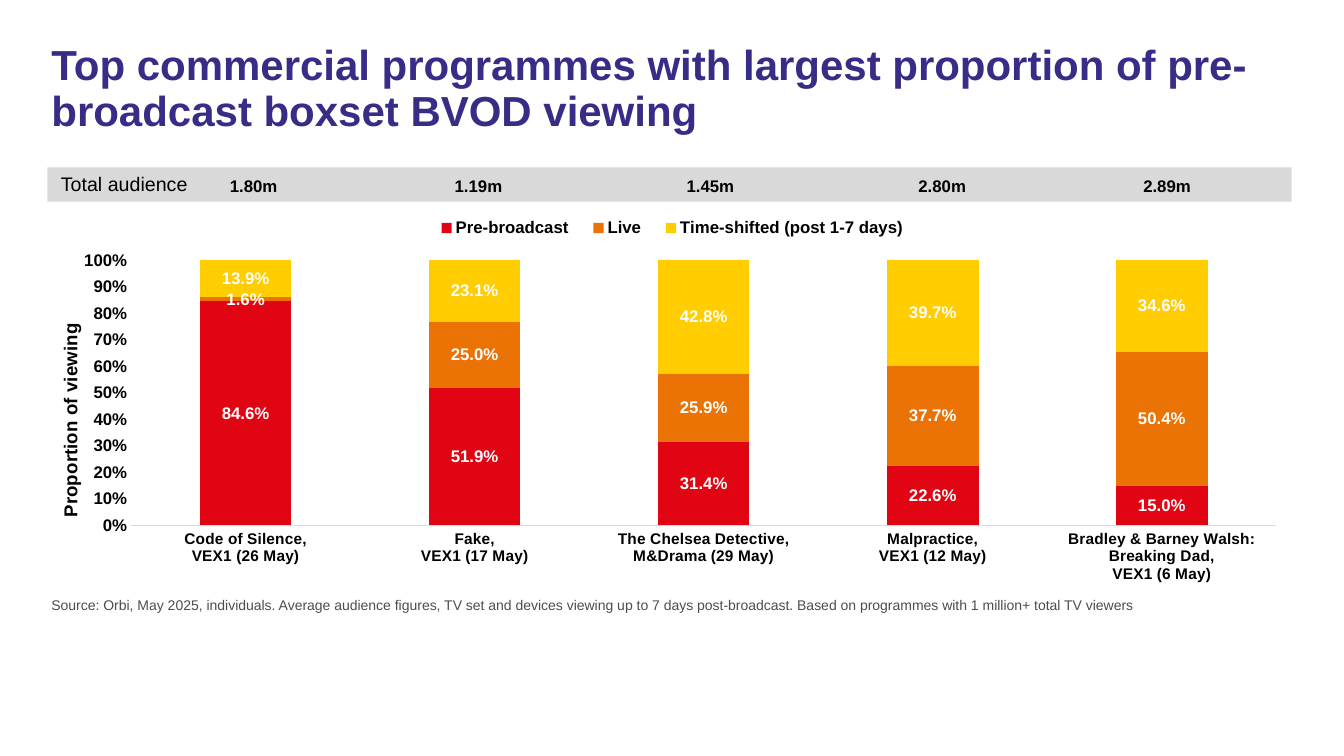
"""Build a slide on programmes with the most pre-broadcast boxset viewing."""
import dataclasses

import lxml.etree
import pptx
import pptx.chart.data
import pptx.dml.color
import pptx.enum.chart
import pptx.enum.shapes
import pptx.enum.text
import pptx.oxml.ns
import pptx.util

Inches = pptx.util.Inches
ALIGN = pptx.enum.text.PP_ALIGN


@dataclasses.dataclass(frozen=True)
class Theme:
    """Colours, font and type sizes of the slide."""
    font: str = "Arial"
    title: str = "372D87"
    text: str = "000000"
    source: str = "4D4D4D"
    band: str = "D9D9D9"
    label: str = "FFFFFF"
    series: tuple = ("E10514", "EB7305", "FFCD00")
    title_size: float = 30
    heading_size: float = 14
    axis_title_size: float = 13.3
    figure_size: float = 12
    category_size: float = 11
    small_size: float = 10


THEME = Theme()
TITLE = ("Top commercial programmes with largest proportion of "
         "pre-broadcast boxset BVOD viewing")
SOURCE = ("Source: Orbi, May 2025, individuals. Average audience figures, TV set and "
          "devices viewing up to 7 days post-broadcast. Based on programmes with "
          "1 million+ total TV viewers")
PROGRAMMES = (
    "Code of Silence,\nVEX1 (26 May)",
    "Fake,\nVEX1 (17 May)",
    "The Chelsea Detective,\nM&Drama (29 May)",
    "Malpractice,\nVEX1 (12 May)",
    "Bradley & Barney Walsh: Breaking Dad,\nVEX1 (6 May)",
)
VIEWING = {
    "Pre-broadcast": (0.846, 0.519, 0.314, 0.226, 0.15),
    "Live": (0.016, 0.25, 0.259, 0.377, 0.504),
    "Time-shifted (post 1-7 days)": (0.139, 0.231, 0.428, 0.397, 0.346),
}
AUDIENCES = (("1.80m", 2.04), ("1.19m", 4.27), ("1.45m", 6.57),
             ("2.80m", 8.87), ("2.89m", 11.1))


def colour(value):
    """Turn a hex string into a colour."""
    return pptx.dml.color.RGBColor.from_string(value)


def style_font(font, size, value, bold=False):
    """Apply the theme font with a size, colour and weight."""
    font.name = THEME.font
    font.size = pptx.util.Pt(size)
    font.bold = bold
    font.color.rgb = colour(value)


def place(shape, left, top, width, height):
    """Move and size a shape, in inches."""
    shape.left, shape.top = Inches(left), Inches(top)
    shape.width, shape.height = Inches(width), Inches(height)


def write_text(shape, text, size, value, bold=False, align=ALIGN.LEFT):
    """Fill a shape with one formatted, top-anchored paragraph."""
    frame = shape.text_frame
    frame.text = text
    frame.word_wrap = True
    frame.auto_size = pptx.enum.text.MSO_AUTO_SIZE.NONE
    frame.vertical_anchor = pptx.enum.text.MSO_ANCHOR.TOP
    paragraph = frame.paragraphs[0]
    paragraph.alignment = align
    paragraph.space_before = pptx.util.Pt(0)
    style_font(paragraph.runs[0].font, size, value, bold)
    return paragraph


def add_title(slide):
    """Write the slide title."""
    place(slide.shapes.title, 0.41, 0.39, 12.4, 1.12)
    paragraph = write_text(slide.shapes.title, TITLE, THEME.title_size, THEME.title, True)
    paragraph.line_spacing = 0.9


def add_source(slide):
    """Write the source line in the body placeholder without a bullet."""
    body = slide.placeholders[1]
    place(body, 0.41, 5.87, 12.4, 0.33)
    paragraph = write_text(body, SOURCE, THEME.small_size, THEME.source)
    properties = paragraph._p.get_or_add_pPr()
    properties.set("marL", "0")
    properties.set("indent", "0")
    lxml.etree.SubElement(properties, pptx.oxml.ns.qn("a:buNone"))


def add_label(slide, text, left, top, width, size, bold, align):
    """Add a one-line text box."""
    box = slide.shapes.add_textbox(Inches(left), Inches(top), Inches(width), Inches(0.3))
    write_text(box, text, size, THEME.text, bold, align)


def add_band(slide):
    """Add the grey band behind the audience figures."""
    band = slide.shapes.add_shape(pptx.enum.shapes.MSO_SHAPE.RECTANGLE, Inches(0.47),
                                  Inches(1.66), Inches(12.34), Inches(0.34))
    band.shadow.inherit = False
    band.fill.solid()
    band.fill.fore_color.rgb = colour(THEME.band)
    band.line.fill.background()


def set_layout(parent, index, inner=False, **fractions):
    """Place a chart part by fractions of the chart area."""
    qn = pptx.oxml.ns.qn
    for existing in parent.findall(qn("c:layout")):
        parent.remove(existing)
    layout = parent.makeelement(qn("c:layout"))
    parent.insert(index, layout)
    manual = lxml.etree.SubElement(layout, qn("c:manualLayout"))
    settings = {"layoutTarget": "inner"} if inner else {}
    settings.update(xMode="edge", yMode="edge", **fractions)
    for name, value in settings.items():
        lxml.etree.SubElement(manual, qn(f"c:{name}")).set("val", str(value))


def style_axes(chart):
    """Format the category and value axes."""
    none = pptx.enum.chart.XL_TICK_MARK.NONE
    categories, values = chart.category_axis, chart.value_axis
    for axis, size in ((categories, THEME.category_size), (values, THEME.figure_size)):
        axis.major_tick_mark = axis.minor_tick_mark = none
        axis.has_major_gridlines = False
        style_font(axis.tick_labels.font, size, THEME.text, True)
    categories.format.line.color.rgb = colour(THEME.band)
    categories.format.line.width = pptx.util.Pt(0.75)
    values.format.line.fill.background()
    values.minimum_scale, values.maximum_scale, values.major_unit = 0, 1, 0.1
    values.tick_labels.number_format = "0%"
    values.tick_labels.number_format_is_linked = False
    frame = values.axis_title.text_frame
    frame.text = "Proportion of viewing"
    style_font(frame.paragraphs[0].runs[0].font, THEME.axis_title_size, THEME.text, True)
    set_layout(values.axis_title._element, 1, x=0.006, y=0.378)


def add_viewing_chart(slide):
    """Add the stacked chart of viewing by programme."""
    data = pptx.chart.data.CategoryChartData(number_format="0.0%")
    data.categories = PROGRAMMES
    for name, values in VIEWING.items():
        data.add_series(name, values)
    chart = slide.shapes.add_chart(
        pptx.enum.chart.XL_CHART_TYPE.COLUMN_STACKED_100, Inches(0.47), Inches(1.36),
        Inches(12.4), Inches(4.8), data).chart
    style_font(chart.font, THEME.small_size, THEME.text)
    chart.has_title = False
    plot = chart.plots[0]
    plot.gap_width, plot.overlap, plot.vary_by_categories = 150, 100, False
    for series, fill in zip(plot.series, THEME.series):
        series.format.fill.solid()
        series.format.fill.fore_color.rgb = colour(fill)
        labels = series.data_labels
        labels.show_value = True
        labels.number_format, labels.number_format_is_linked = "0.0%", False
        labels.position = pptx.enum.chart.XL_LABEL_POSITION.CENTER
        style_font(labels.font, THEME.figure_size, THEME.label, True)
    style_axes(chart)
    set_layout(plot._element.getparent(), 0, True, x=0.067, y=0.255, w=0.916, h=0.548)
    chart.has_legend = True
    chart.legend.position = pptx.enum.chart.XL_LEGEND_POSITION.BOTTOM
    chart.legend.include_in_layout = False
    style_font(chart.legend.font, THEME.figure_size, THEME.text, True)
    set_layout(chart.legend._element, 1, x=0.3, y=0.163, w=0.4, h=0.05)


def main():
    """Build and save the slide."""
    presentation = pptx.Presentation()
    presentation.slide_width, presentation.slide_height = Inches(13.33), Inches(7.5)
    slide = presentation.slides.add_slide(presentation.slide_layouts[1])
    add_title(slide)
    add_band(slide)
    add_viewing_chart(slide)
    add_label(slide, "Total audience", 0.16, 1.66, 1.8, THEME.heading_size, False, ALIGN.RIGHT)
    for audience, left in AUDIENCES:
        add_label(slide, audience, left, 1.69, 0.95, THEME.figure_size, True, ALIGN.CENTER)
    add_source(slide)
    presentation.save("out.pptx")


if __name__ == "__main__":
    main()
